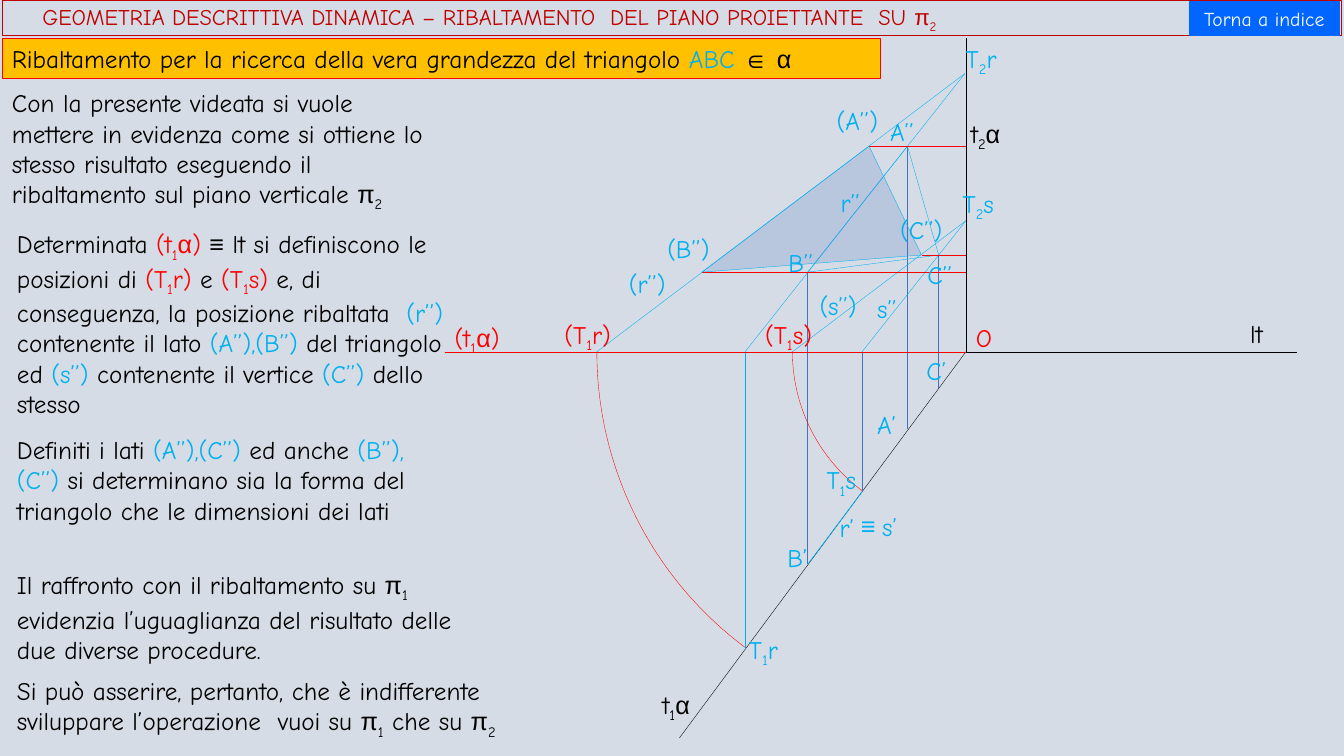
from dataclasses import dataclass
from itertools import groupby

from lxml.etree import SubElement as Sub
from pptx import Presentation
from pptx.dml.color import RGBColor as Rgb
from pptx.enum.shapes import MSO_CONNECTOR as Link, MSO_SHAPE as Kind
from pptx.enum.text import MSO_ANCHOR as Anchor, MSO_AUTO_SIZE as Fit, PP_ALIGN as Align
from pptx.oxml.ns import qn
from pptx.util import Inches, Pt


@dataclass(frozen=True)
class Theme:
    back: str = "D6DCE5"
    ink: str = "000000"
    cyan: str = "00B0F0"
    blue: str = "4472C4"
    red: str = "FF0000"
    dark: str = "C00000"
    gold: str = "FFC000"
    link: str = "0066FF"
    white: str = "FFFFFF"
    font: str = "Comic Neue"
    math: str = "Arial"
    text: int = 18
    title: int = 16
    small: int = 14
    thin: float = 0.25
    bold: float = 0.5


T = Theme()
K, C, R = T.ink, T.cyan, T.red
SIGNS = "παα≡∈"

O = (9.58, 3.49)
T1R, T2R, FLAT_R = (7.39, 6.44), (9.57, 0.73), (5.92, 3.49)
T1S, T2S, FLAT_S = (8.55, 4.88), (9.58, 2.19), (7.86, 3.49)
A2, B2, C2 = (9.0, 1.45), (8.01, 2.7), (9.31, 2.53)
A1, B1, C1 = (9.0, 4.26), (8.01, 5.6), (9.31, 3.85)
FLAT_A, FLAT_B, FLAT_C = (8.62, 1.45), (6.96, 2.7), (9.14, 2.53)

LINES = [
    ((7.1, O[1]), (12.86, O[1]), K), ((O[0], 0.38), O, K), (O, (6.74, 7.32), K),
    ((T1R[0], O[1]), T1R, C), ((T1R[0], O[1]), T2R, C),
    (A2, A1, T.blue), (B2, B1, T.blue), (C2, C1, T.blue),
    ((T1S[0], O[1]), T1S, T.blue), ((T1S[0], O[1]), T2S, C),
    (A2, B2, C), (B2, C2, C), (A2, C2, C),
    ((4.41, O[1]), O, R), (T2R, FLAT_R, C), (T2S, FLAT_S, C),
    *[((O[0], y), (x, y), R) for x, y in (FLAT_A, FLAT_B, FLAT_C)],
]

LABELS = [
    (6.47, 6.79, 0.58, "t_1α", K), (9.53, 1.12, 0.58, "t_2α", K),
    (12.3, 3.11, 0.58, "lt", K), (9.58, 3.15, 0.58, "O", R),
    (4.41, 3.15, 0.79, "(t_1α)", R), (5.5, 3.12, 0.79, "(T_1r)", R),
    (7.49, 3.12, 0.79, "(T_1s)", R), (7.33, 6.24, 0.64, "T_1r", C),
    (9.48, 0.38, 0.64, "T_2r", C), (8.1, 4.56, 0.64, "T_1s", C),
    (9.45, 1.82, 0.64, "T_2s", C), (6.14, 2.61, 0.7, "(r’’)", C),
    (8.24, 1.81, 0.58, "r’’", C), (8.23, 5.03, 0.58, "r’", C),
    (8.44, 5.01, 0.28, "≡", C), (8.65, 5.02, 0.58, "s’", C),
    (8.03, 2.83, 0.7, "(s’’)", C), (8.6, 2.86, 0.58, "s’’", C),
    (8.2, 1.0, 0.67, "(A’’)", C), (8.73, 1.11, 0.58, "A’’", C),
    (8.6, 4.01, 0.58, "A’", C), (6.52, 2.27, 0.67, "(B’’)", C),
    (7.72, 2.4, 0.58, "B’’", C), (7.71, 5.33, 0.58, "B’", C),
    (8.83, 2.08, 0.67, "(C’’)", C), (9.1, 2.52, 0.58, "C’’", C),
    (9.09, 3.48, 0.58, "C’", C),
]

NOTES = [
    ((0.02, 0.82, 4.39, 1.31), [
        ("Con la presente videata si vuole mettere in evidenza come si ottiene lo "
         "stesso risultato eseguendo il ribaltamento sul piano verticale π_2", K)]),
    ((0.07, 2.22, 4.48, 1.92), [
        ("Determinata ", K), ("(t_1α) ", R), ("≡ lt si definiscono le posizioni di ", K),
        ("(T_1r) ", R), ("e ", K), ("(T_1s)", R),
        (" e, di conseguenza, la posizione ribaltata  ", K), ("(r’’) ", C),
        ("contenente il lato ", K), ("(A’’),(B’’) ", C), ("del triangolo ed ", K),
        ("(s’’) ", C), ("contenente il vertice ", K), ("(C’’) ", C), ("dello stesso", K)]),
    ((0.07, 4.26, 4.14, 1.31), [
        ("Definiti i lati ", K), ("(A’’),(C’’) ", C), ("ed anche ", K), ("(B’’),(C’’) ", C),
        ("si determinano sia la forma del triangolo che le dimensioni dei lati", K)]),
    ((0.07, 5.6, 4.88, 1.01), [
        ("Il raffronto con il ribaltamento su π_1 evidenzia l’uguaglianza del "
         "risultato delle due diverse procedure.", K)]),
    ((0.07, 6.65, 5.76, 0.71), [
        ("Si può asserire, pertanto, che è indifferente sviluppare l’operazione  "
         "vuoi su π_1 che su π_2", K)]),
]


def tint(code):
    return Rgb.from_string(code)


def put_run(par, text, hue, size, low=False):
    for sign, part in groupby(text, lambda char: char in SIGNS):
        run = par.add_run()
        run.text = "".join(part)
        run.font.name = T.math if sign else T.font
        run.font.size = Pt(size)
        run.font.color.rgb = tint(hue)
        if low:
            run._r.get_or_add_rPr().set("baseline", "-25000")


def put_text(shape, parts, size=T.text, align=Align.LEFT, anchor=Anchor.TOP, fit=Fit.NONE):
    frame = shape.text_frame
    frame.word_wrap = True
    frame.auto_size = fit
    frame.vertical_anchor = anchor
    par = frame.paragraphs[0]
    par.alignment = align
    for text, hue in parts:
        head, *tail = text.split("_")
        put_run(par, head, hue, size)
        for piece in tail:
            put_run(par, piece[0], hue, size, True)
            put_run(par, piece[1:], hue, size)
    return par


def add_note(slide, box, parts):
    note = slide.shapes.add_textbox(*map(Inches, box))
    put_text(note, parts, fit=Fit.SHAPE_TO_FIT_TEXT)


def edge(shape, hue, width=T.thin):
    shape.line.color.rgb = tint(hue)
    shape.line.width = Pt(width)


def add_line(slide, start, end, hue, width=T.thin):
    line = slide.shapes.add_connector(Link.STRAIGHT, *map(Inches, start + end))
    edge(line, hue, width)
    Sub(line._element.spPr, qn("a:effectLst"))


def add_box(slide, kind, box, fill=None, rim=None):
    shape = slide.shapes.add_shape(kind, *map(Inches, box))
    shape.shadow.inherit = False
    if fill:
        shape.fill.solid()
        shape.fill.fore_color.rgb = tint(fill)
    else:
        shape.fill.background()
    if rim:
        edge(shape, rim)
    else:
        shape.line.fill.background()
    return shape


def add_arc(slide, flat):
    reach = O[0] - flat[0]
    box = (flat[0], O[1] - reach, 2 * reach, 2 * reach)
    arc = add_box(slide, Kind.ARC, box, rim=R)
    for spot, angle in enumerate((126.7, 180)):
        arc.adjustments[spot] = angle * 0.6


def add_face(slide, *points):
    first, *rest = [tuple(map(Inches, point)) for point in points]
    path = slide.shapes.build_freeform(*first)
    path.add_line_segments(rest, close=True)
    face = path.convert_to_shape()
    face.shadow.inherit = False
    face.fill.solid()
    face.fill.fore_color.rgb = tint(T.blue)
    shade = face._element.spPr.find(qn("a:solidFill"))[0]
    Sub(shade, qn("a:alpha"), val="20000")
    edge(face, C)


def add_title(slide):
    title = slide.shapes.title
    title.left, title.top, title.width, title.height = map(Inches, (0.02, 0, 13.28, 0.35))
    title.fill.background()
    edge(title, T.dark)
    text = "GEOMETRIA DESCRITTIVA DINAMICA – RIBALTAMENTO  DEL PIANO PROIETTANTE  SU π_2"
    par = put_text(title, [(text, T.dark)], T.title, anchor=Anchor.MIDDLE)
    par.line_spacing = 0.9
    title.text_frame.margin_left = Inches(0.4)


def main():
    deck = Presentation()
    deck.slide_width, deck.slide_height = Inches(13.33), Inches(7.5)
    slide = deck.slides.add_slide(deck.slide_layouts[5])
    slide.background.fill.solid()
    slide.background.fill.fore_color.rgb = tint(T.back)
    add_title(slide)
    band = add_box(slide, Kind.RECTANGLE, (0.02, 0.38, 8.71, 0.4), T.gold, R)
    lead = "Ribaltamento per la ricerca della vera grandezza del triangolo "
    put_text(band, [(lead, K), ("ABC ", C), ("∈ α", K)], fit=Fit.SHAPE_TO_FIT_TEXT)
    for start, end, hue in LINES:
        add_line(slide, start, end, hue)
    add_line(slide, T1S, B1, C, T.bold)
    for flat in (FLAT_R, FLAT_S):
        add_arc(slide, flat)
    add_face(slide, FLAT_A, FLAT_B, FLAT_C)
    for left, top, width, text, hue in LABELS:
        add_note(slide, (left, top, width, 0.4), [(text, hue)])
    for box, parts in NOTES:
        add_note(slide, box, parts)
    button = add_box(slide, Kind.ACTION_BUTTON_CUSTOM, (11.79, 0.01, 1.5, 0.35), T.link)
    put_text(button, [("Torna a indice", T.white)], T.small, Align.CENTER, Anchor.MIDDLE)
    deck.save("out.pptx")


if __name__ == "__main__":
    main()
